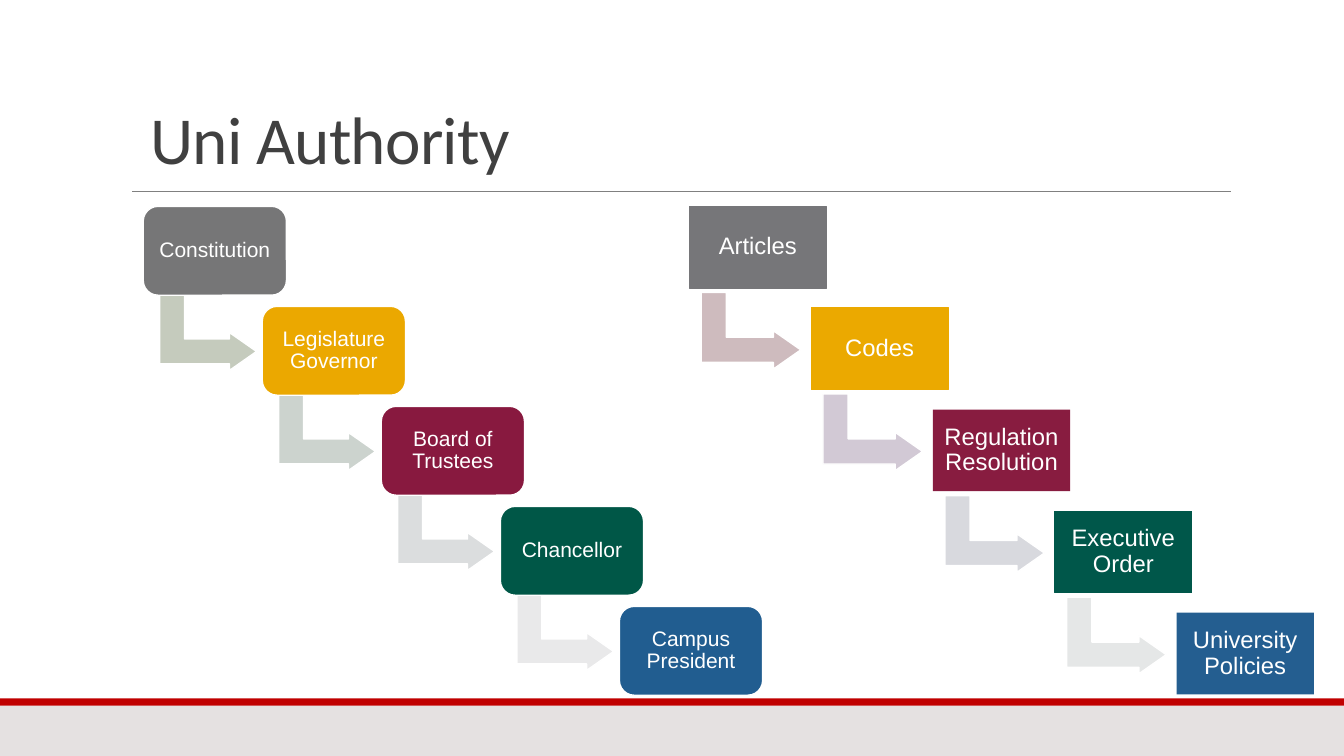
from pptx import Presentation
from pptx.dml.color import RGBColor as Rgb
from pptx.enum.shapes import MSO_CONNECTOR as Conn, MSO_SHAPE as Geo
from pptx.enum.text import MSO_ANCHOR as Anchor, MSO_AUTO_SIZE as Auto, PP_ALIGN as Align
from pptx.oxml.ns import qn
from pptx.util import Cm, Pt
from lxml.etree import SubElement

TITLE = "Uni Authority"

CHAINS = [
    {
        "geo": Geo.ROUNDED_RECTANGLE, "start": (3.61, 5.2), "step": (3, 2.52),
        "box": (3.61, 2.24), "turn": (0.68, 1.96), "arrow": (1.91, 2.44),
        "size": 15, "inset": 0.28,
        "steps": [
            ("Constitution", "767677", "FFFFFF", "C5CBBD"),
            ("Legislature Governor", "EBA800", "FFFFFF", "CCD3CE"),
            ("Board of Trustees", "88193F", "FFFFFF", "DBDDDE"),
            ("Chancellor", "005747", "FFFFFF", "E9E9EA"),
            ("Campus President", "215D90", "FFFFFF", None),
        ],
    },
    {
        "geo": Geo.RECTANGLE, "start": (17.37, 5.2), "step": (3.07, 2.56),
        "box": (3.46, 2.06), "turn": (0.59, 1.88), "arrow": (1.93, 2.51),
        "size": 17, "inset": 0.18,
        "steps": [
            ("Articles", "767679", "767679", "CEBBBE"),
            ("Codes", "EBA900", "EBA900", "D2C9D5"),
            ("Regulation Resolution", "881C40", None, "D8D9DE"),
            ("Executive Order", "00574A", "00574A", "E5E7E7"),
            ("University Policies", "245E90", None, None),
        ],
    },
]

THEME = {
    "head": {"name": "Calibri", "size": Pt(48), "color": "404040"},
    "body": {"name": "Arial", "color": "FFFFFF"},
    "edge": "FFFFFF", "foot": "E5E1E1", "band": "C00000", "rule": "808080",
}
BEND = (0.328, 0.25, 0.358)


def apply(item, form):
    for key, val in form.items():
        if key == "color":
            item.color.rgb = Rgb.from_string(val)
        else:
            setattr(item, key, val)


def draw(slide, geo, spot, size, fill, edge=None, width=1):
    shape = slide.shapes.add_shape(geo, *map(Cm, (*spot, *size)))
    shape.shadow.inherit = False
    shape.fill.solid()
    shape.fill.fore_color.rgb = Rgb.from_string(fill)
    if edge:
        apply(shape.line, {"color": edge, "width": Pt(width)})
    else:
        shape.line.fill.background()
    return shape


def write(shape, text, frame, para, font):
    apply(shape.text_frame, {"word_wrap": True, "auto_size": Auto.NONE, **frame})
    line = shape.text_frame.paragraphs[0]
    apply(line, para)
    run = line.add_run()
    run.text = text
    apply(run.font, font)
    return run


def add_head(slide):
    head = slide.shapes.title
    apply(head, {"left": Cm(3.53), "top": Cm(0.58), "width": Cm(27.94), "height": Cm(4.04)})
    run = write(head, TITLE, {"vertical_anchor": Anchor.BOTTOM},
                {"alignment": Align.LEFT, "line_spacing": 0.85}, THEME["head"])
    run._r.get_or_add_rPr().set("spc", "-50")


def add_frame(slide):
    draw(slide, Geo.RECTANGLE, (0, 17.78), (33.87, 1.27), THEME["foot"])
    draw(slide, Geo.RECTANGLE, (0, 17.6), (33.87, 0.18), THEME["band"])
    rule = slide.shapes.add_connector(Conn.STRAIGHT, Cm(3.33), Cm(4.83), Cm(31.01), Cm(4.83))
    apply(rule.line, {"color": THEME["rule"], "width": Pt(0.5)})
    SubElement(rule._element.spPr, qn("a:effectLst"))


def add_chain(slide, chain):
    sides = ("left", "right", "top", "bottom")
    frame = {f"margin_{side}": Cm(chain["inset"]) for side in sides}
    frame["vertical_anchor"] = Anchor.MIDDLE
    para = {"alignment": Align.CENTER, "line_spacing": 0.9}
    font = {**THEME["body"], "size": Pt(chain["size"])}
    is_round = chain["geo"] == Geo.ROUNDED_RECTANGLE
    for pos, (text, fill, edge, tint) in enumerate(chain["steps"]):
        spot = [a + pos * b for a, b in zip(chain["start"], chain["step"])]
        if tint:
            turn = [a + b for a, b in zip(spot, chain["turn"])]
            arrow = draw(slide, Geo.BENT_UP_ARROW, turn, chain["arrow"], tint, THEME["edge"])
            arrow.rotation = 90
            for num, val in enumerate(BEND):
                arrow.adjustments[num] = val
        box = draw(slide, chain["geo"], spot, chain["box"], fill, edge, 1 if is_round else 0.75)
        if is_round:
            box.adjustments[0] = 0.167
        write(box, text, frame, para, font)


def main():
    deck = Presentation()
    apply(deck, {"slide_width": Cm(33.87), "slide_height": Cm(19.05)})
    slide = deck.slides.add_slide(deck.slide_layouts[5])
    add_frame(slide)
    add_head(slide)
    for chain in CHAINS:
        add_chain(slide, chain)
    deck.save("out.pptx")


if __name__ == "__main__":
    main()
